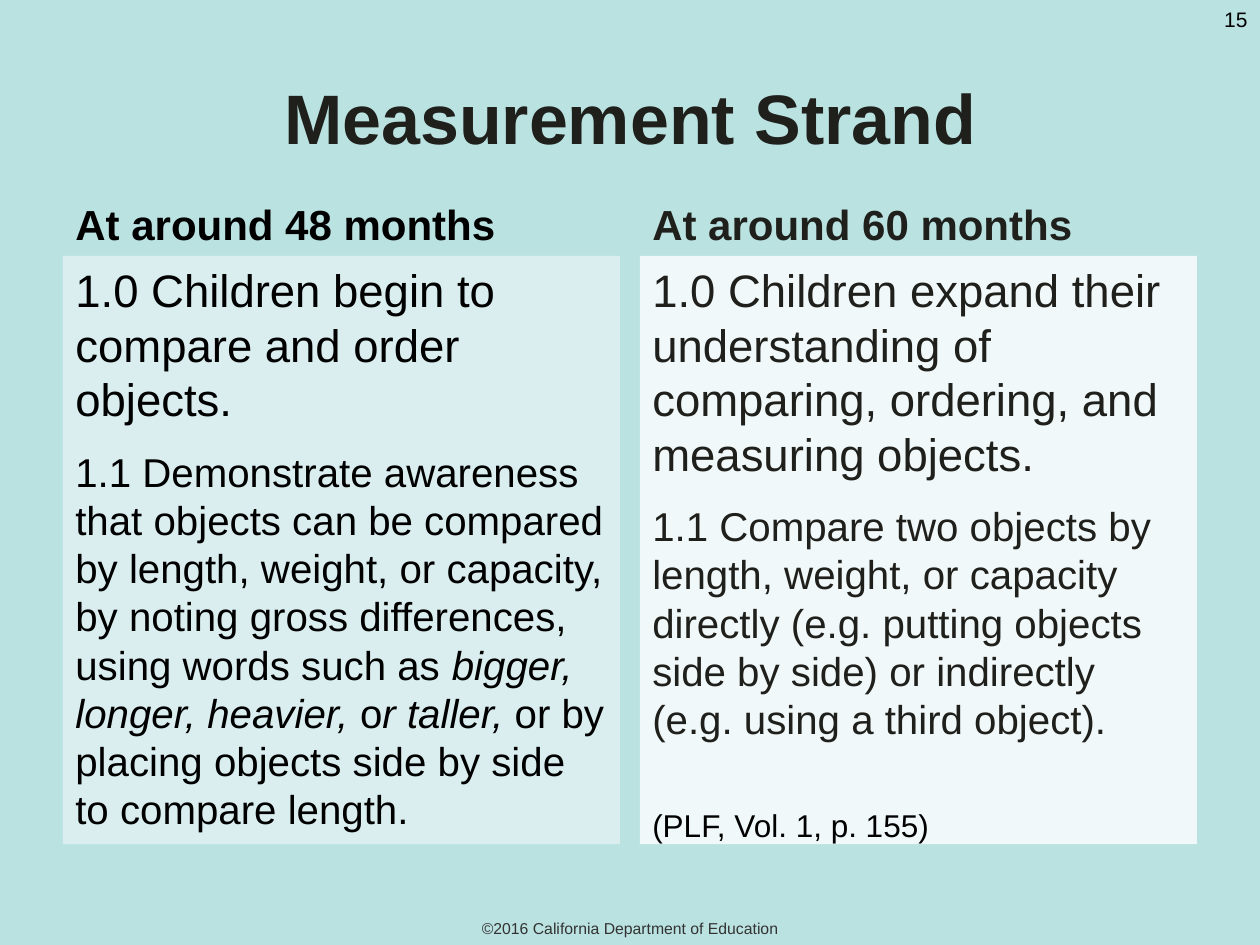
from pptx import Presentation
from pptx import util as u
from pptx.dml.color import RGBColor
from pptx.enum import shapes, text

COLOURS = {
    "background": "BAE2E1",
    "black": "000000",
    "ink": "1F1F1B",
    "footer": "333333",
    "left panel": "DAEDEF",
    "right panel": "F0F8F9",
}
MARGIN, COLUMN_WIDTH, COLUMN_STEP = 1.27, 11.23, 11.63
HEADING_TOP, HEADING_HEIGHT = 3.37, 1.78
PANEL_TOP, PANEL_HEIGHT = 5.16, 11.86

# Each paragraph: size, space before, colour, runs of (wording, italic)
COLUMNS = [
    ("At around 48 months", "black", "left panel", [
        (26, 0, "black", [("1.0 Children begin to compare and order objects.", False)]),
        (23, 12, "black", [
            ("1.1 Demonstrate awareness that objects can be compared by length, "
             "weight, or capacity, by noting gross differences, using words such as ", False),
            ("bigger, longer, heavier, ", True),
            ("o", False),
            ("r taller, ", True),
            ("or by placing objects side by side to compare length.", False),
        ]),
    ]),
    ("At around 60 months", "ink", "right panel", [
        (26, 0, "ink", [("1.0 Children expand their understanding of comparing, "
                         "ordering, and measuring objects.", False)]),
        (23, 12, "ink", [("1.1 Compare two objects by length, weight, or capacity directly "
                          "(e.g. putting objects side by side) or indirectly "
                          "(e.g. using a third object).", False)]),
        (18, 36, "black", [("(PLF, Vol. 1, p. 155)", False)]),
    ]),
]


class StrandPage:
    """Holds the style and the current slide."""

    font_name = "Arial"

    def __init__(self, deck):
        self.page = deck.slides.add_slide(deck.slide_layouts[5])
        fill = self.page.background.fill
        fill.solid()
        fill.fore_color.rgb = self.colour("background")

    def colour(self, name):
        return RGBColor.from_string(COLOURS[name])

    def format(self, para, size, colour, bold=False, align=text.PP_ALIGN.LEFT):
        para.alignment = align
        para.font.name = self.font_name
        para.font.size = u.Pt(size)
        para.font.bold = bold
        para.font.color.rgb = self.colour(colour)

    def title(self, wording, left, top, width, height):
        box = self.page.shapes.title
        box.left, box.top, box.width, box.height = map(u.Cm, (left, top, width, height))
        box.text_frame.text = wording
        box.text_frame.vertical_anchor = text.MSO_ANCHOR.MIDDLE
        self.format(box.text_frame.paragraphs[0], 40, "ink", True, text.PP_ALIGN.CENTER)

    def label(self, wording, place, size, colour, anchor=text.MSO_ANCHOR.TOP, **style):
        frame = self.page.shapes.add_textbox(*map(u.Cm, place)).text_frame
        frame.word_wrap = True
        frame.vertical_anchor = anchor
        frame.text = wording
        self.format(frame.paragraphs[0], size, colour, **style)

    def panel(self, paragraphs, place, fill):
        box = self.page.shapes.add_shape(shapes.MSO_SHAPE.RECTANGLE, *map(u.Cm, place))
        box.shadow.inherit = False
        box.fill.solid()
        box.fill.fore_color.rgb = self.colour(fill)
        box.line.fill.background()
        frame = box.text_frame
        frame.word_wrap = True
        frame.vertical_anchor = text.MSO_ANCHOR.TOP
        for index, (size, before, colour, runs) in enumerate(paragraphs):
            para = frame.add_paragraph() if index else frame.paragraphs[0]
            self.format(para, size, colour)
            if before:
                para.space_before = u.Pt(before)
            for wording, italic in runs:
                span = para.add_run()
                span.text = wording
                if italic:
                    span.font.italic = True


def main():
    deck = Presentation()
    deck.slide_width, deck.slide_height = u.Cm(25.4), u.Cm(19.05)
    strand = StrandPage(deck)
    strand.label("15", (23.5, 0, 1.9, 0.76), 12, "black", align=text.PP_ALIGN.RIGHT)
    strand.label("©2016 California Department of Education", (0, 18.4, 25.4, 0.64),
                 9, "footer", text.MSO_ANCHOR.MIDDLE, align=text.PP_ALIGN.CENTER)
    strand.title("Measurement Strand", MARGIN, 0.76, 22.86, 3.18)
    for index, (heading, colour, fill, paragraphs) in enumerate(COLUMNS):
        left = MARGIN + index * COLUMN_STEP
        strand.label(heading, (left, HEADING_TOP, COLUMN_WIDTH, HEADING_HEIGHT),
                     24, colour, text.MSO_ANCHOR.BOTTOM, bold=True)
        strand.panel(paragraphs, (left, PANEL_TOP, COLUMN_WIDTH, PANEL_HEIGHT), fill)
    deck.save("out.pptx")


if __name__ == "__main__":
    main()
